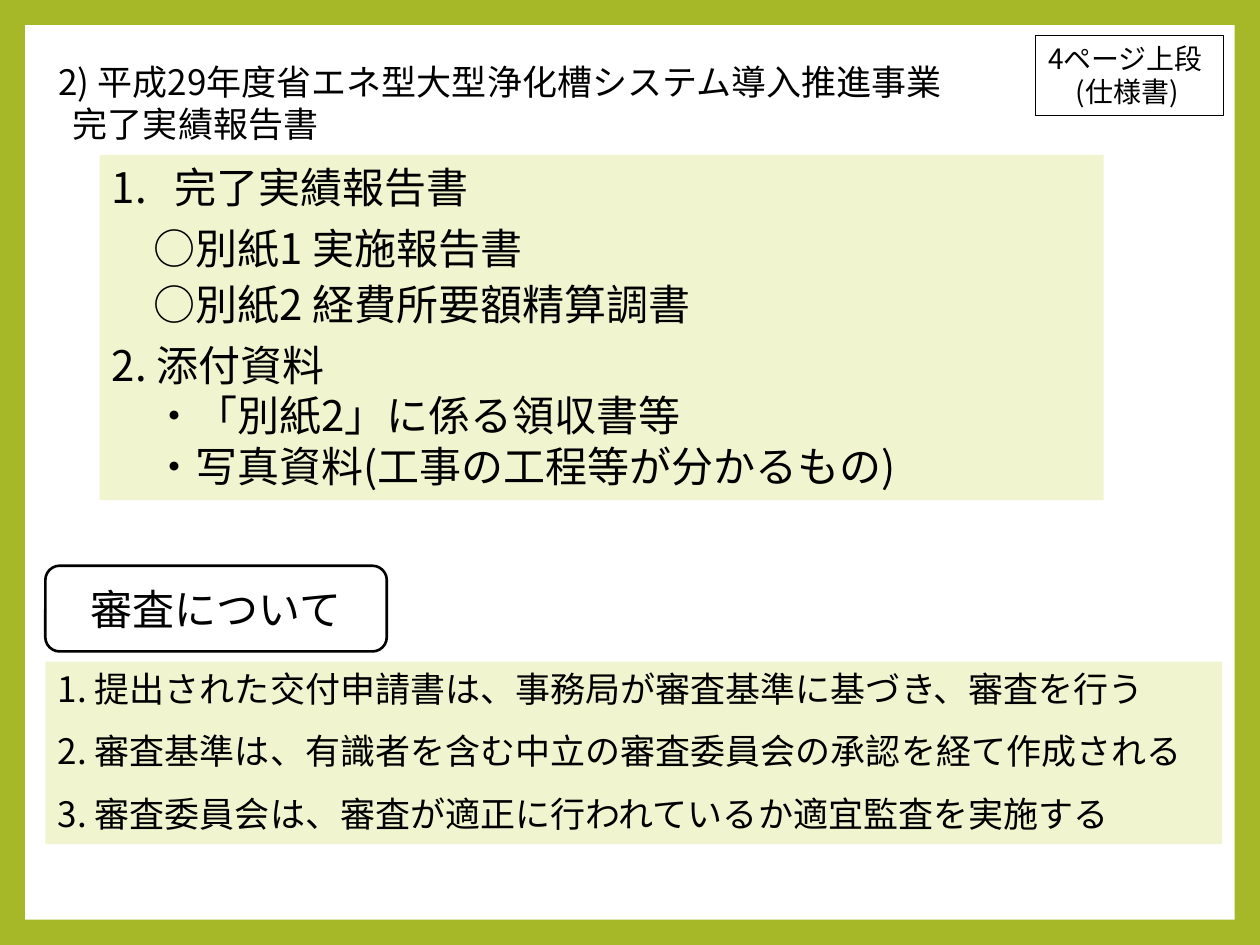
from pptx import Presentation
from pptx.dml.color import RGBColor
from pptx.enum.shapes import MSO_SHAPE as Shape
from pptx.enum.text import MSO_ANCHOR as Anchor, PP_ALIGN as Align
from pptx.oxml.ns import qn
from pptx.util import Inches, Pt
from lxml.etree import SubElement

GREEN, PALE, WHITE, BLACK = "A6B727", "F0F5D0", "FFFFFF", "000000"


def color(code):
    return RGBColor.from_string(code)


class Deck:
    face = "Noto Sans CJK JP"

    def __init__(self, wide, high):
        self.prs = Presentation()
        self.prs.slide_width = Inches(wide)
        self.prs.slide_height = Inches(high)
        self.slide = self.prs.slides.add_slide(self.prs.slide_layouts[6])

    def back(self, code):
        fill = self.slide.background.fill
        fill.solid()
        fill.fore_color.rgb = color(code)

    def box(self, at, fill=None, line=None, kind=Shape.RECTANGLE):
        shape = self.slide.shapes.add_shape(kind, *map(Inches, at))
        shape.shadow.inherit = False
        if fill:
            shape.fill.solid()
            shape.fill.fore_color.rgb = color(fill)
        else:
            shape.fill.background()
        if line:
            shape.line.color.rgb = color(BLACK)
            shape.line.width = Pt(line)
        else:
            shape.line.fill.background()
        return shape

    def label(self, at):
        return self.slide.shapes.add_textbox(*map(Inches, at))

    def put(self, shape, size, rows, anchor=Anchor.TOP):
        """Each row is (text, formats); gap is in points, left and hang in inches."""
        frame = shape.text_frame
        frame.word_wrap = True
        frame.vertical_anchor = anchor
        for i, (text, form) in enumerate(rows):
            para = frame.add_paragraph() if i else frame.paragraphs[0]
            self.indent(para, form)
            para.alignment = form.get("align", Align.LEFT)
            para.space_before = Pt(form.get("gap", 0))
            run = para.add_run()
            run.text = text
            style = {"size": Pt(size), "name": self.face}
            for key, value in style.items():
                setattr(run.font, key, value)
            run.font.color.rgb = color(BLACK)
            east = SubElement(run.font._element, qn("a:ea"))
            east.set("typeface", self.face)

    def indent(self, para, form):
        props = para._p.get_or_add_pPr()
        props.set("marL", str(Inches(form.get("left", 0))))
        props.set("indent", str(Inches(form.get("hang", 0))))
        if form.get("auto"):
            font = SubElement(props, qn("a:buFont"))
            font.set("typeface", self.face)
            SubElement(props, qn("a:buAutoNum")).set("type", "arabicPeriod")


def main():
    deck = Deck(10, 7.5)

    # Green frame around a white page
    deck.back(GREEN)
    deck.box((0.2, 0.2, 9.6, 7.1), WHITE)

    # Review heading
    head = deck.box((0.36, 4.49, 2.71, 0.68), WHITE, 1.5, Shape.ROUNDED_RECTANGLE)
    deck.put(head, 24, [("審査について", {"align": Align.CENTER})], Anchor.MIDDLE)

    # Review rules
    rules = [
        "1. 提出された交付申請書は、事務局が審査基準に基づき、審査を行う",
        "2. 審査基準は、有識者を含む中立の審査委員会の承認を経て作成される",
        "3. 審査委員会は、審査が適正に行われているか適宜監査を実施する",
    ]
    panel = deck.box((0.36, 5.25, 9.34, 1.45), PALE)
    deck.put(panel, 20, [(r, {"gap": 11.5 if i else 0}) for i, r in enumerate(rules)])

    # Report contents
    step = 0.33
    panel = deck.box((0.79, 1.23, 7.97, 2.74), PALE)
    deck.put(panel, 24, [
        ("完了実績報告書", {"left": 0.5, "hang": -0.5, "auto": True}),
        ("○別紙1 実施報告書", {"left": step, "gap": 6}),
        ("○別紙2 経費所要額精算調書", {"left": step, "gap": 3.5}),
        ("2. 添付資料", {"gap": 6}),
        ("・「別紙2」に係る領収書等", {"left": step}),
        ("・写真資料(工事の工程等が分かるもの)", {"left": step}),
    ])

    # Title
    title = deck.label((0.24, 0.43, 7.46, 0.77))
    deck.put(title, 20, [
        ("2) 平成29年度省エネ型大型浄化槽システム導入推進事業", {"align": Align.CENTER}),
        ("完了実績報告書", {"left": 0.24}),
    ])

    # Page note
    note = deck.box((8.22, 0.28, 1.49, 0.64), line=0.75)
    deck.put(note, 16, [("4ページ上段", {}), ("(仕様書)", {"left": 0.22})])

    deck.prs.save("out.pptx")


if __name__ == "__main__":
    main()
